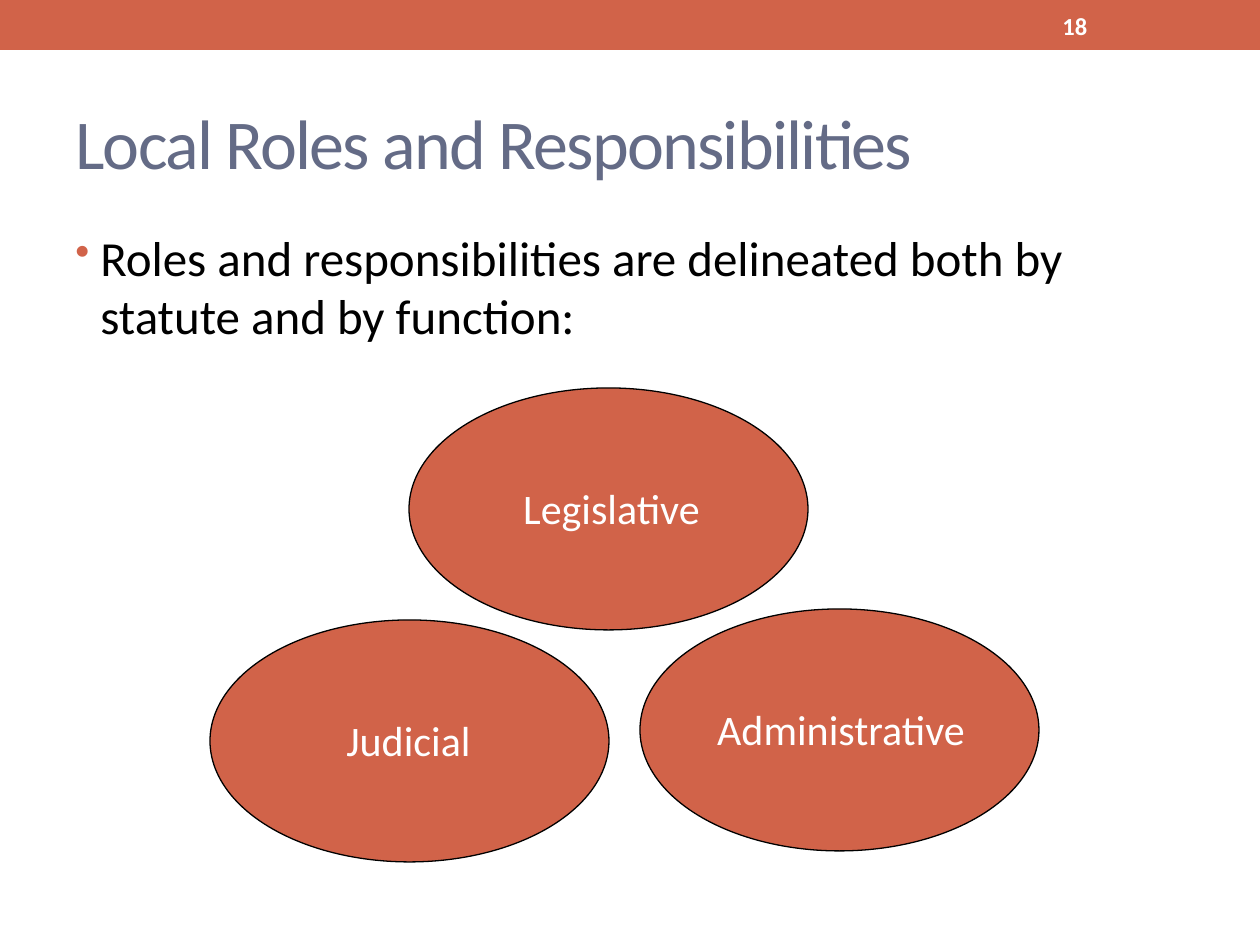
from lxml import etree
from pptx import Presentation
from pptx.dml.color import RGBColor
from pptx.enum.shapes import MSO_SHAPE
from pptx.enum.text import MSO_ANCHOR, PP_ALIGN
from pptx.oxml.ns import qn
from pptx.util import Emu, Pt

RECT, OVAL = MSO_SHAPE.RECTANGLE, MSO_SHAPE.OVAL
TOP, MIDDLE = MSO_ANCHOR.TOP, MSO_ANCHOR.MIDDLE
LEFT, CENTER = PP_ALIGN.LEFT, PP_ALIGN.CENTER
PX = 914400 // 126
RUST = "D16349"


def paint(target, color):
    if hasattr(target, "solid"):
        target.solid()
        target.fore_color.rgb = RGBColor.from_string(color)
    else:
        target.color.rgb = RGBColor.from_string(color)


def write(shape, text, size, color, anchor=TOP, align=LEFT):
    frame = shape.text_frame
    frame.word_wrap = True
    frame.vertical_anchor = anchor
    para = frame.paragraphs[0]
    para.text = text
    para.alignment = align
    para.font.name = "Calibri"
    para.font.size = Pt(size)
    paint(para.font, color)
    return para


deck = Presentation()
deck.slide_width, deck.slide_height = Emu(1260 * PX), Emu(945 * PX)
slide = deck.slides.add_slide(deck.slide_layouts[6])
shapes = slide.shapes

band = shapes.add_shape(RECT, 0, 0, 1260 * PX, 50 * PX)
band.shadow.inherit = False
paint(band.fill, RUST)
band.line.fill.background()

title = shapes.add_textbox(63 * PX, 73 * PX, 1134 * PX, 136 * PX)
para = write(title, "Local Roles and Responsibilities", 40, "646B86", MIDDLE)
para.runs[0].font.bold = False
para.runs[0].font._element.set("spc", "-100")

body = shapes.add_textbox(63 * PX, 221 * PX, 1134 * PX, 672 * PX)
para = write(body, "Roles and responsibilities are delineated both by statute and by function:", 28, "000000")
para.space_before = Pt(7)
props = para._p.get_or_add_pPr()
props.set("marL", str(25 * PX))
props.set("indent", str(-25 * PX))
color = etree.Element(qn("a:buClr"))
etree.SubElement(color, qn("a:srgbClr"), val=RUST)
size = etree.Element(qn("a:buSzPct"), val="85000")
mark = etree.Element(qn("a:buChar"), char="•")
spot = props.index(props.find(qn("a:defRPr")))
props[spot:spot] = [color, size, mark]

roles = [
    ("Judicial", 210, 620, 251, 315),
    ("Administrative", 640, 609, 673, 336),
    ("Legislative", 409, 388, 467, 289),
]
for name, left, top, start, width in roles:
    group = shapes.add_group_shape().shapes
    oval = group.add_shape(OVAL, left * PX, top * PX, 399 * PX, 242 * PX)
    label = group.add_shape(RECT, start * PX, (top + 88) * PX, width * PX, 64 * PX)
    for part in (oval, label):
        part.shadow.inherit = False
        paint(part.fill, RUST)
    paint(oval.line, "000000")
    oval.line.width = Pt(0.75)
    label.line.fill.background()
    write(label, name, 24, "FFFFFF", align=CENTER)

number = shapes.add_textbox(1050 * PX, 3 * PX, 147 * PX, 45 * PX)
para = write(number, "18", 14, "FFFFFF", MIDDLE)
para.font.bold = True

deck.save("out.pptx")
